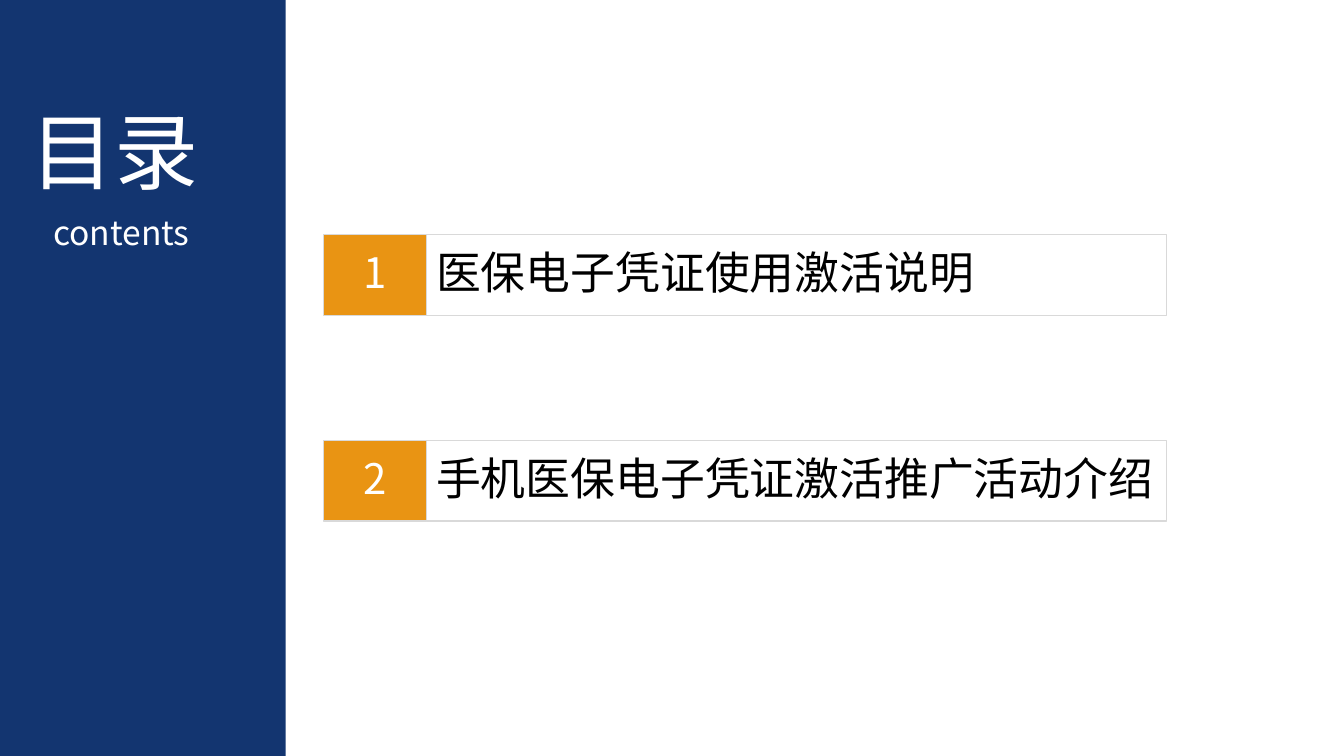
from lxml.etree import SubElement
from pptx import Presentation
from pptx.dml.color import RGBColor
from pptx.enum.shapes import MSO_SHAPE
from pptx.enum.text import MSO_ANCHOR, PP_ALIGN
from pptx.oxml.ns import qn
from pptx.util import Pt

HEADINGS = [
    # text, size, left, top, width, height
    ("目录", 60, 14.4, 67.7, 157.7, 79.9),
    ("contents", 24, 31, 147.6, 125.3, 36),
]
TOPICS = ["医保电子凭证使用激活说明", "手机医保电子凭证激活推广活动介绍"]

FONT = "Noto Sans CJK SC"
NAVY, ORANGE, GREY = "133570", "E99413", "D9D9D9"
WHITE, BLACK = "FFFFFF", "000000"

PAGE_WIDTH, PAGE_HEIGHT = 960, 540
SIDEBAR_WIDTH = 204
NUMBER_LEFT, NUMBER_WIDTH = 231.1, 73.4
TOPIC_LEFT, TOPIC_WIDTH = NUMBER_LEFT + NUMBER_WIDTH, 528.5
ROW_TOP, ROW_HEIGHT, ROW_PITCH = 167.8, 57.6, 146.8


def color(hex_code):
    return RGBColor.from_string(hex_code)


def write(shape, text, size, hex_code, align):
    shape.text_frame.word_wrap = True
    para = shape.text_frame.paragraphs[0]
    para.text = text
    para.alignment = align
    para.font.size = Pt(size)
    para.font.name = FONT
    para.font.color.rgb = color(hex_code)
    # Chinese characters take their typeface from the East Asian font.
    defaults = para._p.pPr.find(qn("a:defRPr"))
    SubElement(defaults, qn("a:ea"), typeface=FONT)
    return para


def add_rectangle(page, left, top, width, height, fill=None, line=None):
    box = page.shapes.add_shape(
        MSO_SHAPE.RECTANGLE, Pt(left), Pt(top), Pt(width), Pt(height))
    box.shadow.inherit = False
    if fill:
        box.fill.solid()
        box.fill.fore_color.rgb = color(fill)
    else:
        box.fill.background()
    if line:
        box.line.color.rgb = color(line)
        box.line.width = Pt(0.75)
    else:
        box.line.fill.background()
    return box


def add_cell(page, left, top, width, text, size, hex_code, align, fill=None):
    """Add one outlined, vertically centred part of a contents row."""
    box = add_rectangle(page, left, top, width, ROW_HEIGHT, fill, GREY)
    box.text_frame.vertical_anchor = MSO_ANCHOR.MIDDLE
    write(box, text, size, hex_code, align).line_spacing = 0.9


def main():
    deck = Presentation()
    deck.slide_width, deck.slide_height = Pt(PAGE_WIDTH), Pt(PAGE_HEIGHT)
    page = deck.slides.add_slide(deck.slide_layouts[6])

    add_rectangle(page, 0, 0, SIDEBAR_WIDTH, PAGE_HEIGHT, NAVY)
    for text, size, *place in HEADINGS:
        box = page.shapes.add_textbox(*map(Pt, place))
        write(box, text, size, WHITE, PP_ALIGN.JUSTIFY)

    for index, topic in enumerate(TOPICS):
        top = ROW_TOP + index * ROW_PITCH
        add_cell(page, TOPIC_LEFT, top, TOPIC_WIDTH, topic, 32, BLACK,
                 PP_ALIGN.LEFT)
        add_cell(page, NUMBER_LEFT, top, NUMBER_WIDTH, str(index + 1), 30,
                 WHITE, PP_ALIGN.CENTER, ORANGE)

    deck.save("out.pptx")


if __name__ == "__main__":
    main()
